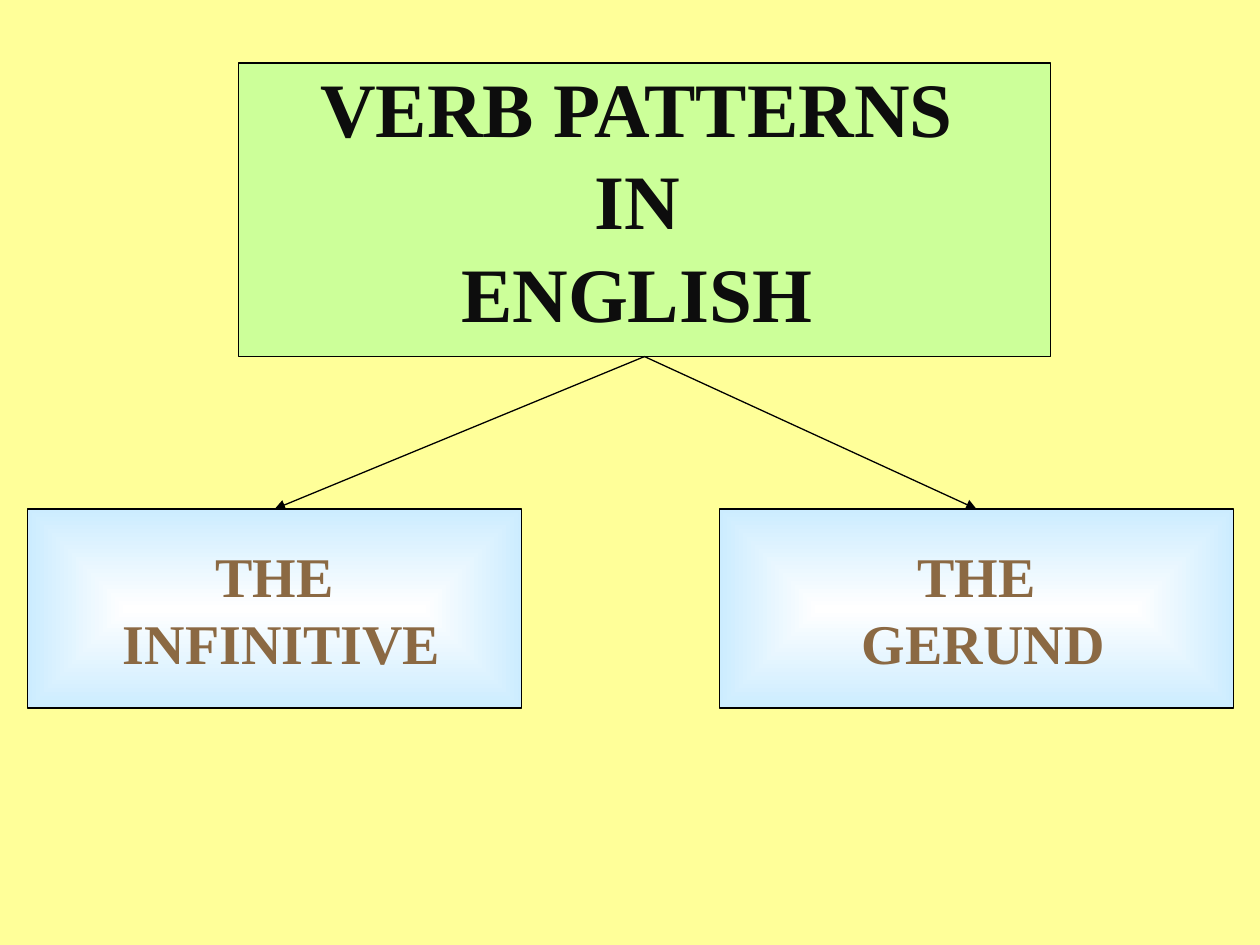
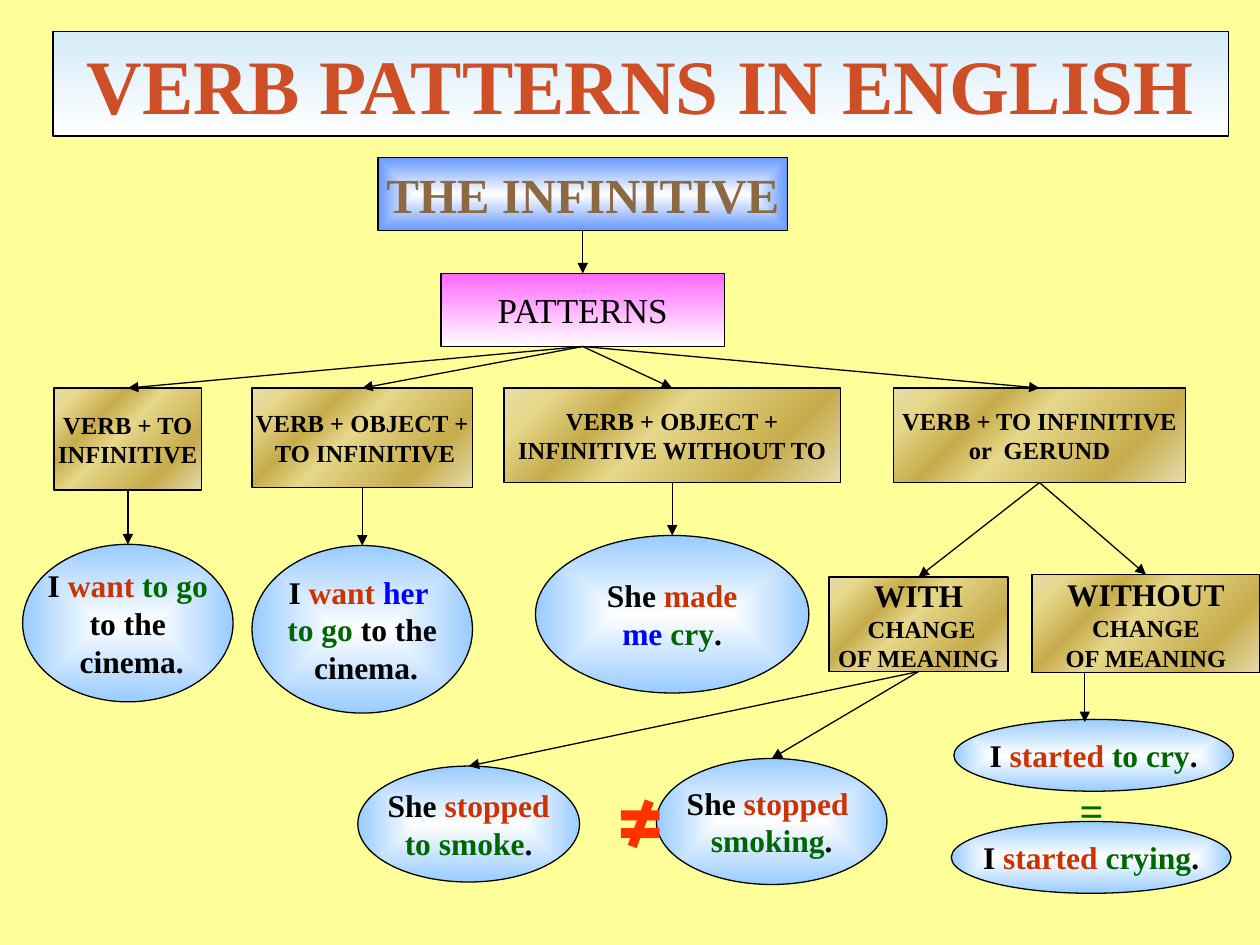
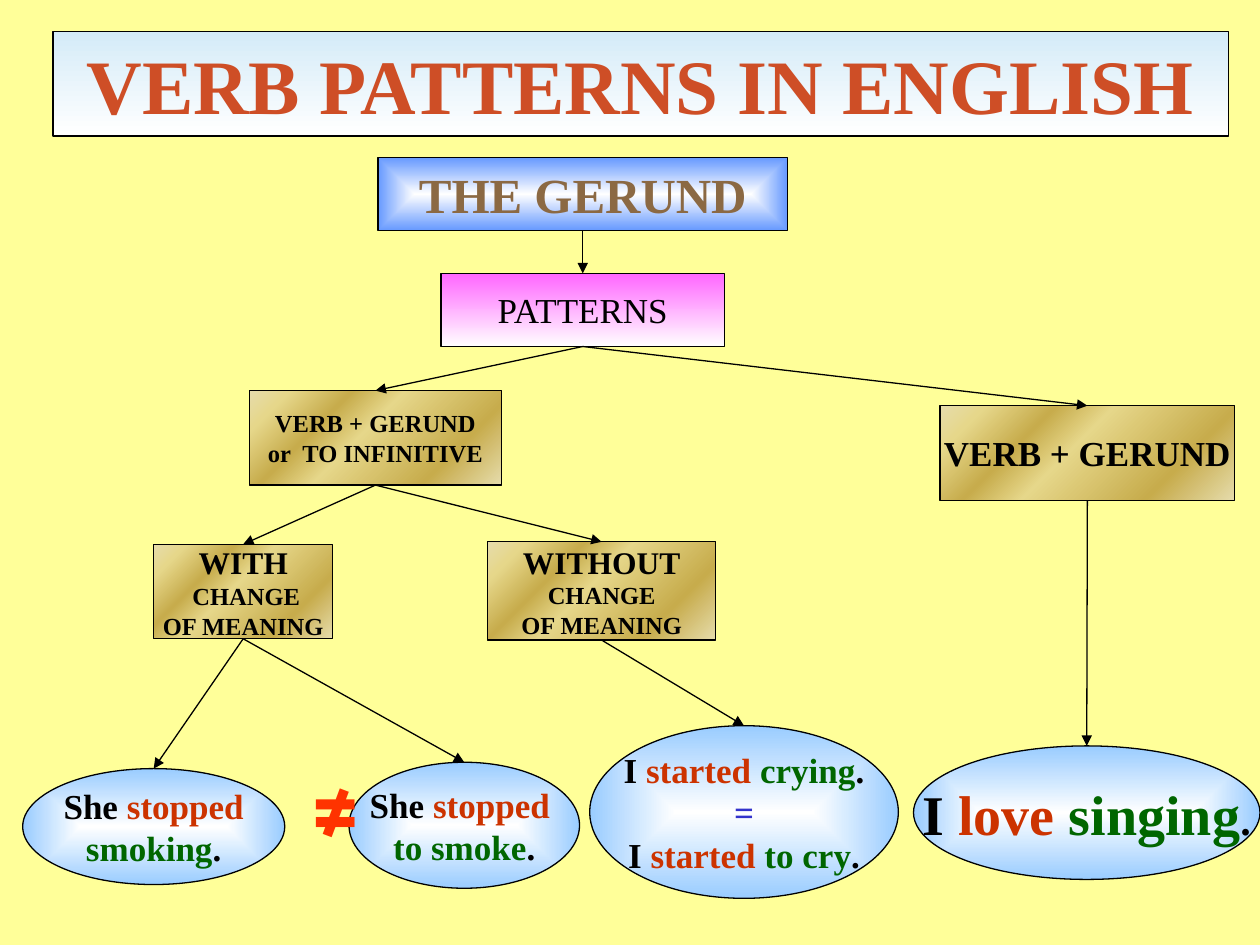
from lxml.etree import SubElement
from pptx import Presentation
from pptx.dml.color import RGBColor
from pptx.enum.shapes import MSO_CONNECTOR, MSO_SHAPE
from pptx.enum.text import MSO_ANCHOR, PP_ALIGN
from pptx.oxml.ns import qn
from pptx.util import Inches, Pt

BLACK = RGBColor(0x00, 0x00, 0x00)
INK = RGBColor(0x0D, 0x0D, 0x0D)
WHITE = RGBColor(0xFF, 0xFF, 0xFF)
YELLOW = RGBColor(0xFF, 0xFF, 0x99)
LIME = RGBColor(0xCC, 0xFF, 0x99)
BROWN = RGBColor(0x8B, 0x69, 0x43)
RUST = RGBColor(0xCE, 0x4E, 0x26)
RED = RGBColor(0xCC, 0x33, 0x00)
BRIGHT = RGBColor(0xFF, 0x33, 0x00)
GREEN = RGBColor(0x00, 0x66, 0x00)
BLUE = RGBColor(0x00, 0x00, 0xFF)
INDIGO = RGBColor(0x33, 0x33, 0xCC)
ICE = RGBColor(0xCC, 0xEC, 0xFF)
MIST = RGBColor(0xD4, 0xEB, 0xF8)
SKY = RGBColor(0x99, 0xCC, 0xFF)
AZURE = RGBColor(0x66, 0x99, 0xFF)
PINK = RGBColor(0xFF, 0x66, 0xFF)
SAND = RGBColor(0xE6, 0xDC, 0xAC)
STRAW = RGBColor(0xE6, 0xD7, 0x8A)
GOLD = RGBColor(0xC7, 0xAC, 0x4C)

SERIF = "Times New Roman"
MONO = "Noto Sans Mono"
RECT, OVAL = MSO_SHAPE.RECTANGLE, MSO_SHAPE.OVAL
BRASS = [(0, SAND), (12, STRAW), (30, GOLD), (45, STRAW), (77, GOLD), (100, SAND)]


def write(shape, lines, size=18, ink=BLACK, bold=True, font=SERIF,
          align=PP_ALIGN.CENTER, anchor=MSO_ANCHOR.MIDDLE):
    """Each line is a string or a list of strings and (text, ink[, size]) parts."""
    frame = shape.text_frame
    frame.word_wrap = False
    frame.vertical_anchor = anchor
    for i, line in enumerate(lines):
        para = frame.paragraphs[0] if i == 0 else frame.add_paragraph()
        para.alignment = align
        for part in [line] if isinstance(line, str) else line:
            word, tint, *own = (part, ink) if isinstance(part, str) else part
            run = para.add_run()
            run.text = word
            run.font.name = font
            run.font.size = Pt(own[0] if own else size)
            run.font.bold = bold
            run.font.color.rgb = tint


def blend(shape, stops, angle=None):
    """Fill with a gradient: linear at an angle, or from the centre outwards."""
    shape.fill.solid()
    solid = shape.fill._xPr.find(qn("a:solidFill"))
    grad = solid.makeelement(qn("a:gradFill"), {"rotWithShape": "1"})
    solid.getparent().replace(solid, grad)
    marks = SubElement(grad, qn("a:gsLst"))
    for spot, tint in stops:
        stop = SubElement(marks, qn("a:gs"), pos=str(spot * 1000))
        SubElement(stop, qn("a:srgbClr"), val=str(tint))
    if angle is None:
        route = SubElement(grad, qn("a:path"), {"path": "shape"})
        SubElement(route, qn("a:fillToRect"), dict.fromkeys("ltrb", "50000"))
    else:
        SubElement(grad, qn("a:lin"), ang=str(angle * 60000), scaled="1")


def block(slide, box, kind=RECT):
    shape = slide.shapes.add_shape(kind, *map(Inches, box))
    shape.shadow.inherit = False
    shape.line.color.rgb = BLACK
    shape.line.width = Pt(0.75)
    return shape


def glow(slide, box, tint, lines, kind=RECT, **style):
    """Shape that is white in the middle and tinted at its edge."""
    shape = block(slide, box, kind)
    blend(shape, [(0, WHITE), (100, tint)])
    write(shape, lines, **style)
    return shape


def fade(slide, box, tint, lines, **style):
    """Box that runs from a tint at the top to white."""
    shape = block(slide, box)
    blend(shape, [(0, tint), (100, WHITE)], 90)
    write(shape, lines, **style)
    return shape


def rule(slide, box, lines, size=14):
    shape = block(slide, box)
    blend(shape, BRASS, 45)
    write(shape, lines, size)
    return shape


def case(slide, box, lines, size=18):
    return glow(slide, box, SKY, lines, OVAL, size=size)


def label(slide, box, lines, **style):
    write(slide.shapes.add_textbox(*map(Inches, box)), lines, **style)


def differ(slide, box):
    label(slide, box, ["≠"], size=48, ink=BRIGHT, font=MONO)


def arrow(slide, start=(0, 0), end=(0, 0)):
    line = slide.shapes.add_connector(
        MSO_CONNECTOR.STRAIGHT, *map(Inches, (*start, *end)))
    line.line.color.rgb = BLACK
    line.line.width = Pt(0.75)
    SubElement(line.line._get_or_add_ln(), qn("a:tailEnd"), type="triangle")
    SubElement(line._element.spPr, qn("a:effectLst"))
    return line


def link(slide, top, *ends):
    """Arrows from the foot of one shape to the tops of others."""
    for end in ends:
        line = arrow(slide)
        line.begin_connect(top, 2)
        line.end_connect(end, 0)


def sheet(deck):
    slide = deck.slides.add_slide(deck.slide_layouts[6])
    slide.background.fill.solid()
    slide.background.fill.fore_color.rgb = YELLOW
    return slide


def head(slide, name):
    """Title band, topic and the PATTERNS box, which is returned."""
    fade(slide, (0.42, 0.25, 9.33, 0.83), MIST, ["VERB PATTERNS IN ENGLISH"],
         size=44, ink=RUST)
    topic = glow(slide, (3, 1.25, 3.25, 0.58), AZURE, [name], size=28, ink=BROWN)
    root = fade(slide, (3.5, 2.17, 2.25, 0.58), PINK, ["PATTERNS"],
                size=20, bold=False)
    link(slide, topic, root)
    return root


def sense(slide, x, y, gap):
    """The WITH and WITHOUT boxes, the second one a gap to the right."""
    tail = ("OF MEANING", BLACK, 14)
    with_ = rule(slide, (x, y + 0.02, 1.42, 0.75),
                 ["WITH", [(" CHANGE", BLACK, 14)], [tail]], 18)
    without = rule(slide, (x + 1.42 + gap, y, 1.81, 0.78),
                   ["WITHOUT", [("CHANGE", BLACK, 14)], [tail]], 18)
    return with_, without


WANT = ["I ", ("want ", RED)]
START = ["I ", ("started ", RED)]
STOP = ["She ", ("stopped", RED)]
STOP_GAP = ["She ", ("stopped ", RED)]


def green(word):
    return [(word, GREEN), "."]


def opening(deck):
    slide = sheet(deck)
    top = block(slide, (1.89, 0.5, 6.45, 2.33))
    top.fill.solid()
    top.fill.fore_color.rgb = LIME
    forms = [glow(slide, (x, 4.04, wide, 1.58), ICE, ["THE", " " + name],
                  size=32, ink=BROWN)
             for x, wide, name in [(0.22, 3.92, "INFINITIVE"), (5.71, 4.08, "GERUND")]]
    link(slide, top, *forms)
    label(slide, (2.44, 0.5, 5.23, 2.16), ["VERB PATTERNS", "IN", "ENGLISH"],
          size=44, ink=INK)


def infinitive(deck):
    slide = sheet(deck)
    root = head(slide, "THE INFINITIVE")
    rules = [rule(slide, (x, 3.08, wide, high), lines) for x, wide, high, lines in [
        (0.43, 1.17, 0.81, ["VERB + TO", "INFINITIVE"]),
        (2, 1.75, 0.79, ["VERB + OBJECT +", " TO INFINITIVE"]),
        (4, 2.67, 0.75, ["VERB + OBJECT +", "INFINITIVE WITHOUT TO"]),
        (7.09, 2.32, 0.75, ["VERB + TO INFINITIVE", "or  GERUND"])]]
    link(slide, root, *rules)
    cases = [
        case(slide, (0.18, 4.32, 1.67, 1.25),
             [WANT + [("to go", GREEN)], "to the", " cinema."]),
        case(slide, (2, 4.33, 1.75, 1.33),
             [WANT + [("her ", BLUE)], [("to go ", GREEN), "to the"], " cinema."]),
        case(slide, (4.25, 4.25, 2.17, 1.25),
             [["She ", ("made", RED)], [("me ", BLUE)] + green("cry")])]
    for top, end in zip(rules, cases):
        link(slide, top, end)
    senses = sense(slide, 6.58, 4.56, 0.19)
    link(slide, rules[-1], *senses)
    link(slide, senses[0],
         case(slide, (2.84, 6.08, 1.76, 0.92), [STOP, green("to smoke")]),
         case(slide, (5.21, 6.02, 1.83, 1), [STOP_GAP, green("smoking")]))
    differ(slide, (4.79, 6.3, 0.37, 0.41))
    case(slide, (7.57, 5.71, 2.22, 0.57), [START + green("to cry")])
    label(slide, (8.47, 6.18, 0.39, 0.5), ["="], size=24, ink=GREEN,
          align=PP_ALIGN.LEFT, anchor=MSO_ANCHOR.TOP)
    case(slide, (7.55, 6.52, 2.22, 0.57), [START + green("crying")])
    arrow(slide, (8.61, 5.33), (8.61, 5.73))


def gerund(deck):
    slide = sheet(deck)
    root = head(slide, "THE GERUND")
    either = rule(slide, (1.98, 3.1, 2, 0.75), ["VERB + GERUND", "or  TO INFINITIVE"])
    only = rule(slide, (7.46, 3.22, 2.34, 0.75), ["VERB + GERUND"], 20)
    link(slide, root, either, only)
    senses = sense(slide, 1.22, 4.3, 1.23)
    link(slide, either, *senses)
    link(slide, senses[0],
         case(slide, (0.18, 6.1, 2.08, 0.92), [STOP, green("smoking")], 20),
         case(slide, (2.77, 6.05, 1.83, 1), [STOP_GAP, green("to smoke")], 20))
    differ(slide, (2.37, 6.28, 0.37, 0.28))
    link(slide, senses[1], case(
        slide, (4.68, 5.76, 2.45, 1.37),
        [START + green("crying"), [("=", INDIGO)], START + green("to cry")], 20))
    link(slide, only, case(
        slide, (7.25, 5.92, 2.75, 1.06),
        [["I ", ("love ", RED), ("singing", GREEN), (".", BLACK, 24)]], 32))


def main():
    deck = Presentation()
    deck.slide_width, deck.slide_height = Inches(10), Inches(7.5)
    for build in (opening, infinitive, gerund):
        build(deck)
    deck.save("out.pptx")


if __name__ == "__main__":
    main()
